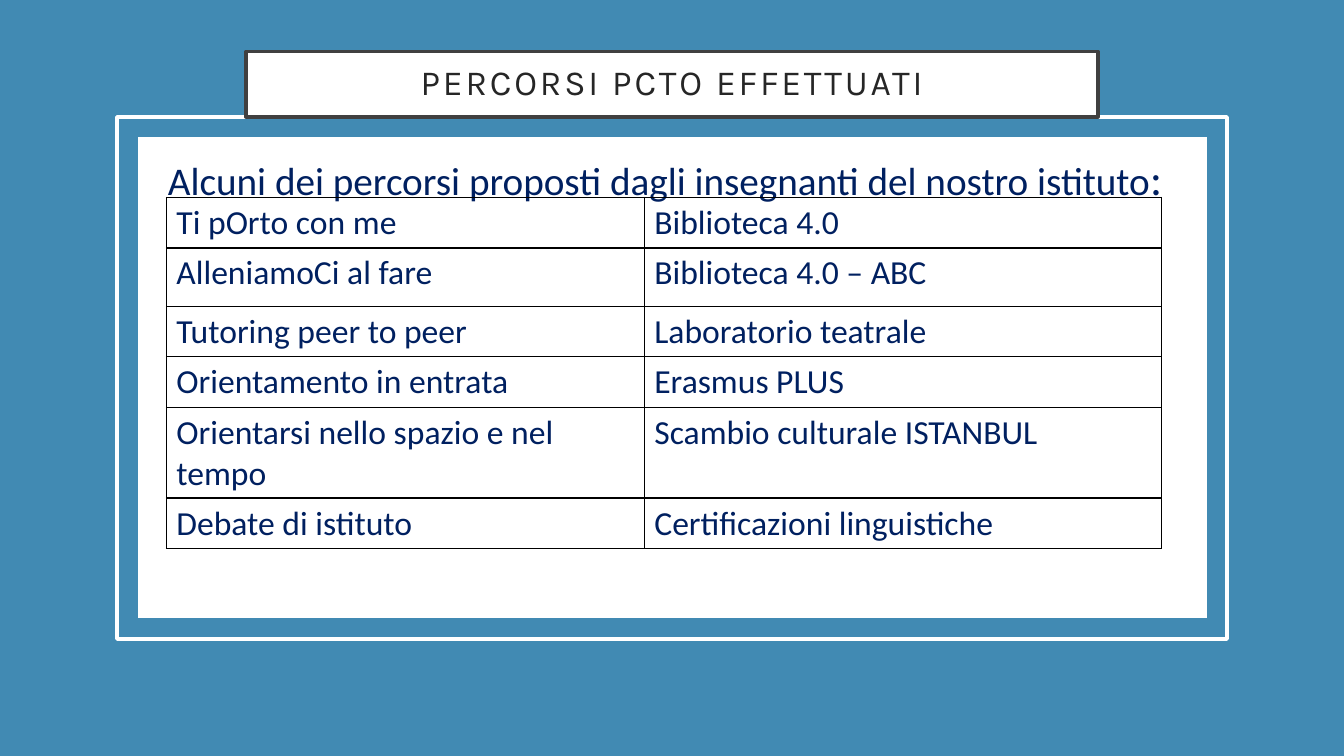
from dataclasses import dataclass
from typing import Optional

from lxml.etree import SubElement
from pptx import Presentation
from pptx.dml.color import RGBColor
from pptx.enum.shapes import MSO_SHAPE
from pptx.enum.text import MSO_ANCHOR, PP_ALIGN
from pptx.oxml.ns import qn
from pptx.util import Inches, Pt

COLORS = {
    "blue": "418AB3",
    "white": "FFFFFF",
    "outline": "404040",
    "title": "262626",
    "navy": "002060",
    "border": "000000",
}


@dataclass
class Panel:
    left: float
    top: float
    width: float
    height: float
    fill: Optional[str] = None
    line: Optional[str] = None


BACKDROP = Panel(0, 0, 13.33, 7.5, fill="blue")
CONTENT = Panel(1.37, 1.36, 10.6, 4.77, fill="white")
FRAME = Panel(1.16, 1.16, 11.01, 5.18, line="white")
TITLE = Panel(2.44, 0.51, 8.45, 0.65, fill="white", line="outline")

COLUMN_WIDTHS = (4.74, 5.13)
PROJECTS = [
    (0.5, "Ti pOrto con me", "Biblioteca 4.0"),
    (0.58, "AlleniamoCi al fare", "Biblioteca 4.0 – ABC"),
    (0.5, "Tutoring peer to peer", "Laboratorio teatrale"),
    (0.5, "Orientamento in entrata", "Erasmus PLUS"),
    (0.9, "Orientarsi nello spazio e nel tempo", "Scambio culturale ISTANBUL"),
    (0.5, "Debate di istituto", "Certificazioni linguistiche"),
]


def color(name: str) -> RGBColor:
    return RGBColor.from_string(COLORS[name])


def set_font(font, name: str, size: float, color_name: str) -> None:
    font.name = name
    font.size = Pt(size)
    font.color.rgb = color(color_name)


def add_panel(slide, panel: Panel):
    shape = slide.shapes.add_shape(
        MSO_SHAPE.RECTANGLE, Inches(panel.left), Inches(panel.top),
        Inches(panel.width), Inches(panel.height))
    shape.shadow.inherit = False
    if panel.fill:
        shape.fill.solid()
        shape.fill.fore_color.rgb = color(panel.fill)
    else:
        shape.fill.background()
    if panel.line:
        shape.line.color.rgb = color(panel.line)
        shape.line.width = Pt(2.5)
    else:
        shape.line.fill.background()
    return shape


def add_title(slide) -> None:
    frame = add_panel(slide, TITLE).text_frame
    frame.word_wrap = True
    frame.vertical_anchor = MSO_ANCHOR.MIDDLE
    frame.margin_left = frame.margin_right = Inches(0.2)
    frame.margin_top = frame.margin_bottom = Inches(0.2)
    paragraph = frame.paragraphs[0]
    paragraph.alignment = PP_ALIGN.CENTER
    paragraph.line_spacing = 0.9
    set_font(paragraph.font, "Karla", 25.2, "title")
    run = paragraph.add_run()
    run.text = "PERCORSI PCTO EFFETTUATI"
    # Letter spacing, in hundredths of a point
    run._r.get_or_add_rPr().set("spc", "200")


def add_introduction(slide) -> None:
    box = slide.shapes.add_textbox(
        Inches(1.52), Inches(1.45), Inches(10.15), Inches(4.42))
    box.text_frame.word_wrap = True
    paragraph = box.text_frame.paragraphs[0]
    paragraph.alignment = PP_ALIGN.CENTER
    paragraph.space_before = Pt(10)
    set_font(paragraph.font, "Calibri", 28, "navy")
    introduction = "Alcuni dei percorsi proposti dagli insegnanti del nostro istituto"
    for text, size in ((introduction, 28), (":", 32)):
        run = paragraph.add_run()
        run.text = text
        run.font.size = Pt(size)


def add_borders(cell) -> None:
    properties = cell._tc.get_or_add_tcPr()
    for side in ("lnL", "lnR", "lnT", "lnB"):
        line = SubElement(properties, qn(f"a:{side}"), w=str(Pt(1)))
        fill = SubElement(line, qn("a:solidFill"))
        SubElement(fill, qn("a:srgbClr"), val=COLORS["border"])


def add_project_table(slide) -> None:
    table = slide.shapes.add_table(
        len(PROJECTS), len(COLUMN_WIDTHS), Inches(1.65), Inches(1.96),
        Inches(sum(COLUMN_WIDTHS)), Inches(3.48)).table
    table.first_row = False
    table.horz_banding = False
    for column, width in zip(table.columns, COLUMN_WIDTHS):
        column.width = Inches(width)
    for row, (height, *names) in zip(table.rows, PROJECTS):
        row.height = Inches(height)
        for cell, name in zip(row.cells, names):
            cell.text = name
            set_font(cell.text_frame.paragraphs[0].font, "Calibri", 24, "navy")
            # Borders come before the fill in the cell properties
            add_borders(cell)
            cell.fill.background()


def main() -> None:
    presentation = Presentation()
    presentation.slide_width = Inches(13.33)
    presentation.slide_height = Inches(7.5)
    slide = presentation.slides.add_slide(presentation.slide_layouts[6])

    # Background and frame
    for panel in (BACKDROP, CONTENT, FRAME):
        add_panel(slide, panel)

    # Text and table
    add_title(slide)
    add_introduction(slide)
    add_project_table(slide)

    presentation.save("out.pptx")


if __name__ == "__main__":
    main()
